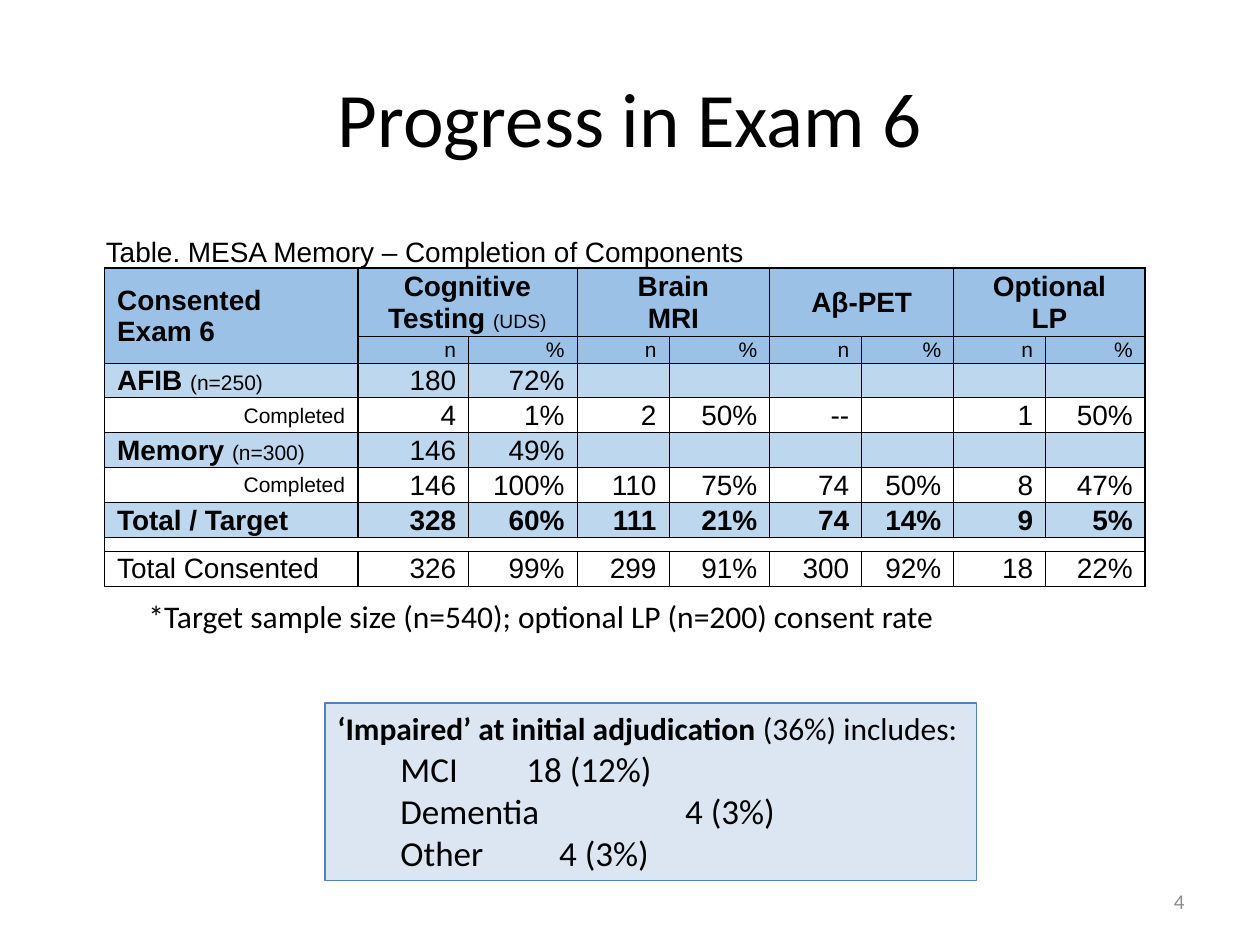
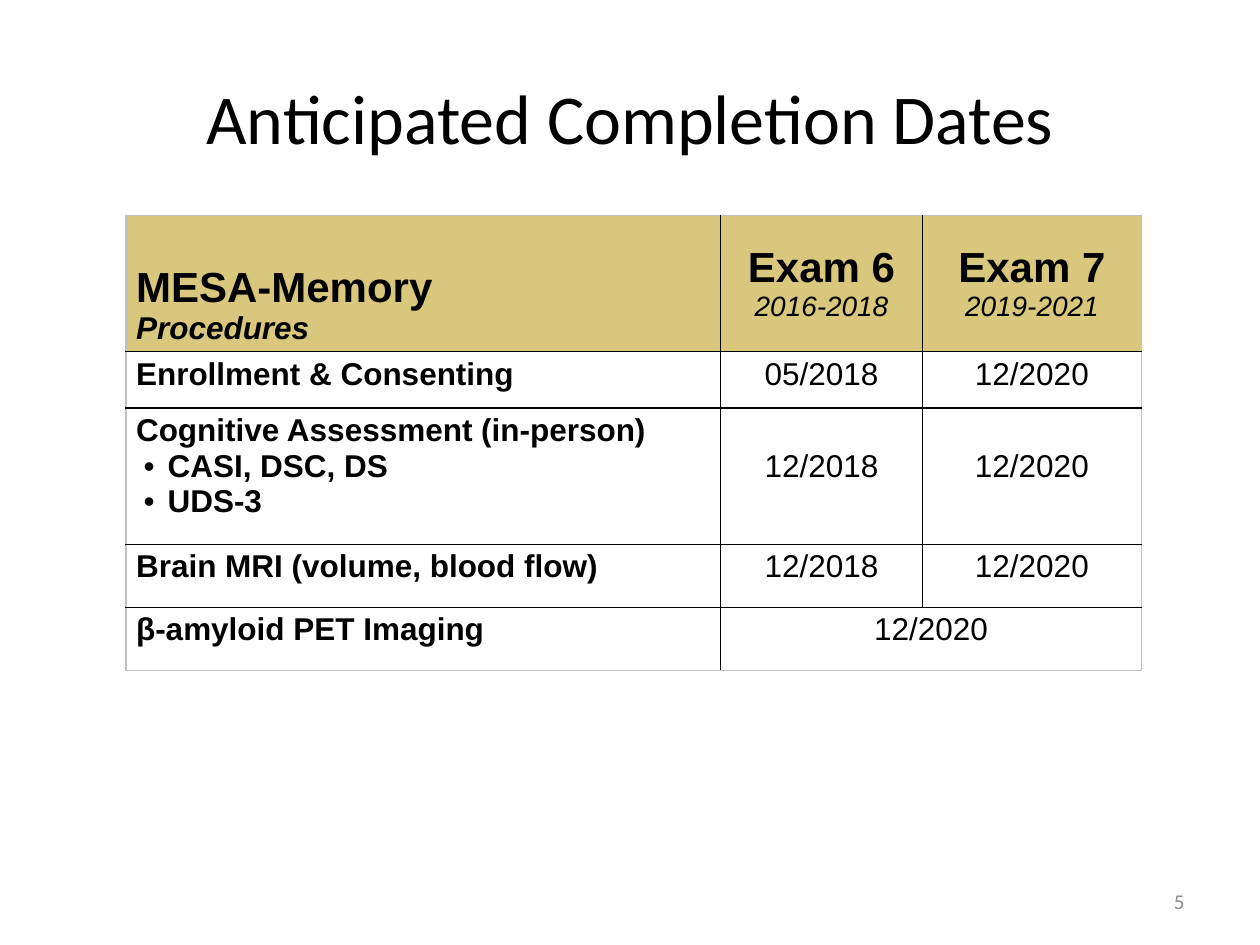
from lxml.etree import SubElement
from pptx import Presentation
from pptx.dml.color import RGBColor
from pptx.enum.shapes import MSO_SHAPE
from pptx.enum.text import MSO_ANCHOR as ANCHOR, PP_ALIGN as ALIGN
from pptx.oxml.ns import qn
from pptx.util import Inches, Pt

COLORS = {
    "text": "000000", "number": "8C8C8C", "white": "FFFFFF",
    "head": "9BC2E6", "band": "BDD7EE", "gold": "D9C77D",
    "box": "DCE6F2", "box_line": "4F81BD", "edge": "BFBFBF",
}

TITLES = [("Progress in Exam 6", 44, 4), ("Anticipated Completion Dates", 40, 5)]

CAPTION = "Table. MESA Memory – Completion of Components"
CORNER = [[("Consented", 16, "b")], [("Exam 6", 16, "b")]]
COMPONENTS = [
    [[("Cognitive", 16, "b")], [("Testing ", 16, "b"), ("(UDS)", 11, "")]],
    [[("Brain", 16, "b")], [("MRI", 16, "b")]],
    [[("Aβ-PET", 16, "b")]],
    [[("Optional", 16, "b")], [("LP", 16, "b")]],
]
PROGRESS = [
    ("band", [("AFIB ", 16, "b"), ("(n=250)", 12, "")], ["180", "72%"]),
    ("white", [("Completed", 12, "")], ["4", "1%", "2", "50%", "--", "", "1", "50%"]),
    ("band", [("Memory ", 16, "b"), ("(n=300)", 12, "")], ["146", "49%"]),
    ("white", [("Completed", 12, "")], ["146", "100%", "110", "75%", "74", "50%", "8", "47%"]),
    ("band", [("Total / Target", 16, "b")], ["328", "60%", "111", "21%", "74", "14%", "9", "5%"]),
    ("white", [], []),
    ("white", [("Total Consented", 16, "")], ["326", "99%", "299", "91%", "300", "92%", "18", "22%"]),
]
PROGRESS_COLS = [2.01, 0.88, 0.86, 0.73, 0.8, 0.73, 0.73, 0.73, 0.79]
PROGRESS_ROWS = [0.25, 0.51, 0.2] + [0.26] * 5 + [0.11, 0.26]
FOOTNOTE = "*Target sample size (n=540); optional LP (n=200) consent rate"
IMPAIRED = [("‘Impaired’ at initial adjudication ", 18, "b"), ("(36%) includes:", 18, "")]
DIAGNOSES = [("MCI", "18 (12%)", 1.5), ("Dementia", "4 (3%)", 2.76), ("Other", "4 (3%)", 1.76)]

EXAMS = [("Exam 6", "2016-2018"), ("Exam 7", "2019-2021")]
PROCEDURES = [
    (["Enrollment & Consenting"], ["05/2018", "12/2020"]),
    (["Cognitive Assessment (in-person)", "CASI, DSC, DS", "UDS-3"], ["12/2018", "12/2020"]),
    (["Brain MRI (volume, blood flow)"], ["12/2018", "12/2020"]),
    (["β-amyloid PET Imaging"], ["12/2020"]),
]
DATES_COLS = [4.72, 1.6, 1.74]
DATES_ROWS = [1.08, 0.45, 1.08, 0.5, 0.5]


def rgb(name):
    return RGBColor.from_string(COLORS[name])


def write(tf, paras, font="Calibri", align=ALIGN.LEFT, color="text"):
    for i, runs in enumerate(paras):
        p = tf.paragraphs[0] if i == 0 else tf.add_paragraph()
        p.alignment = align
        for text, size, style in runs:
            r = p.add_run()
            r.text = text
            r.font.name, r.font.size = font, Pt(size)
            r.font.bold, r.font.italic = "b" in style, "i" in style
            r.font.color.rgb = rgb(color)


def add_text(s, box, paras, align=ALIGN.LEFT, anchor=ANCHOR.TOP, color="text"):
    tf = s.shapes.add_textbox(*map(Inches, box)).text_frame
    tf.word_wrap = True
    tf.vertical_anchor = anchor
    write(tf, paras, align=align, color=color)


def add_slide(prs, title, size, number):
    s = prs.slides.add_slide(prs.slide_layouts[6])
    add_text(s, (0.5, 0.3, 9, 1.25), [[(title, size, "")]], ALIGN.CENTER, ANCHOR.MIDDLE)
    add_text(s, (7.17, 6.95, 2.33, 0.4), [[(str(number), 12, "")]],
             ALIGN.RIGHT, ANCHOR.MIDDLE, "number")
    return s


def add_grid(s, left, top, cols, rows):
    table = s.shapes.add_table(len(rows), len(cols), Inches(left), Inches(top),
                               Inches(sum(cols)), Inches(sum(rows))).table
    table.first_row = table.horz_banding = False
    for col, width in zip(table.columns, cols):
        col.width = Inches(width)
    for row, height in zip(table.rows, rows):
        row.height = Inches(height)
    return table


def fill_cell(cell, paras, align, fill, margins, anchor, empty_size=12):
    cell.margin_left, cell.margin_top, cell.margin_right, cell.margin_bottom = map(Inches, margins)
    cell.vertical_anchor = anchor
    cell.fill.solid()
    cell.fill.fore_color.rgb = rgb(fill)
    write(cell.text_frame, paras, "Arial", align)
    if not paras:
        SubElement(cell.text_frame.paragraphs[0]._p, qn("a:endParaRPr"), sz=str(empty_size * 100))


def rule_cells(table, vertical, horizontal):
    for r in range(len(table.rows)):
        for c in range(len(table.columns)):
            cell = table.cell(r, c)
            if cell.is_spanned:
                continue
            width = cell.span_width if cell.is_merge_origin else 1
            height = cell.span_height if cell.is_merge_origin else 1
            lines = [("L", vertical(r, c)), ("R", vertical(r, c + width)),
                     ("T", horizontal(r)), ("B", horizontal(r + height))]
            tcPr = cell._tc.get_or_add_tcPr()
            for side, (weight, color) in lines:
                ln = SubElement(tcPr, qn(f"a:ln{side}"), w=str(Pt(weight)))
                if weight:
                    solid = SubElement(ln, qn("a:solidFill"))
                    SubElement(solid, qn("a:srgbClr"), val=COLORS[color])
                else:
                    SubElement(ln, qn("a:noFill"))


def add_progress_table(s):
    table = add_grid(s, 0.83, 1.85, PROGRESS_COLS, PROGRESS_ROWS)
    last = len(PROGRESS_COLS) - 1
    spacer = 8
    for r in (0, spacer):
        table.cell(r, 0).merge(table.cell(r, last))
    table.cell(1, 0).merge(table.cell(2, 0))
    for c in range(1, last, 2):
        table.cell(1, c).merge(table.cell(1, c + 1))

    def vertical(r, i):
        return (0 if r == 0 else 1 if i in (0, 1, 7, last + 1) else 0.5), "text"

    rule_cells(table, vertical, lambda i: ((0, 1)[i] if i < 2 else 0.5, "text"))

    def put(r, c, paras, align, fill, empty_size=12):
        fill_cell(table.cell(r, c), paras, align, fill, (0.1, 0.01, 0.1, 0),
                  ANCHOR.MIDDLE, empty_size)

    fill_cell(table.cell(0, 0), [[(CAPTION, 16, "")]], ALIGN.LEFT, "white",
              (0.01, 0.01, 0.01, 0), ANCHOR.BOTTOM)
    put(1, 0, CORNER, ALIGN.LEFT, "head")
    for i, component in enumerate(COMPONENTS):
        put(1, 1 + 2 * i, component, ALIGN.CENTER, "head")
        for j, unit in enumerate("n%"):
            put(2, 1 + 2 * i + j, [[(unit, 12, "")]], ALIGN.RIGHT, "head")
    for r, (fill, label, values) in enumerate(PROGRESS, 3):
        if r == spacer:
            put(r, 0, [], ALIGN.LEFT, fill, 6)
            continue
        completed = label[0][0] == "Completed"
        put(r, 0, [label], ALIGN.RIGHT if completed else ALIGN.LEFT, fill)
        style = "b" if label[0][0].startswith("Total /") else ""
        for c in range(1, last + 1):
            value = values[c - 1] if c <= len(values) else ""
            put(r, c, [[(value, 16, style)]] if value else [], ALIGN.RIGHT, fill)


def add_impaired_box(s):
    sp = s.shapes.add_shape(MSO_SHAPE.RECTANGLE, *map(Inches, (2.58, 5.58, 5.17, 1.41)))
    sp.shadow.inherit = False
    sp.fill.solid()
    sp.fill.fore_color.rgb = rgb("box")
    sp.line.color.rgb = rgb("box_line")
    sp.line.width = Pt(0.75)
    tf = sp.text_frame
    tf.word_wrap = True
    tf.vertical_anchor = ANCHOR.TOP
    write(tf, [IMPAIRED] + [[(f"\t{name}\t{count}", 20, "")] for name, count, _ in DIAGNOSES])
    for p, (_, _, stop) in zip(tf.paragraphs[1:], DIAGNOSES):
        tabs = SubElement(p._p.get_or_add_pPr(), qn("a:tabLst"))
        for pos in (0.5, stop):
            SubElement(tabs, qn("a:tab"), pos=str(Inches(pos)), algn="l")


def add_dates_table(s):
    table = add_grid(s, 1, 1.71, DATES_COLS, DATES_ROWS)
    table.cell(4, 1).merge(table.cell(4, 2))

    def edge(i, end):
        return 1, "edge" if i in (0, end) else "text"

    rule_cells(table, lambda r, i: edge(i, len(DATES_COLS)), lambda i: edge(i, len(DATES_ROWS)))

    def put(r, c, paras, align, fill="white", anchor=ANCHOR.TOP, top=0.04):
        fill_cell(table.cell(r, c), paras, align, fill, (0.08, top, 0.08, 0.04), anchor)

    put(0, 0, [[("MESA-Memory", 24, "b")], [("Procedures", 18, "bi")]],
        ALIGN.LEFT, "gold", ANCHOR.BOTTOM)
    for c, (exam, years) in enumerate(EXAMS, 1):
        put(0, c, [[(exam, 24, "b")], [(years, 16, "i")]], ALIGN.CENTER, "gold", ANCHOR.MIDDLE)
    for r, (lines, dates) in enumerate(PROCEDURES, 1):
        put(r, 0, [[(line, 18, "b")] for line in lines], ALIGN.LEFT)
        for p in table.cell(r, 0).text_frame.paragraphs[1:]:
            pPr = p._p.get_or_add_pPr()
            pPr.set("marL", str(Inches(0.25)))
            pPr.set("indent", str(Inches(-0.19)))
            SubElement(pPr, qn("a:buFont"), typeface="Arial")
            SubElement(pPr, qn("a:buChar"), char="•")
        for c, date in enumerate(dates, 1):
            put(r, c, [[(date, 18, "")]], ALIGN.CENTER, top=0.32 if len(lines) > 1 else 0.04)


def main():
    prs = Presentation()
    prs.slide_width, prs.slide_height = Inches(10), Inches(7.5)
    progress, dates = [add_slide(prs, *title) for title in TITLES]
    add_progress_table(progress)
    add_text(progress, (1.08, 4.69, 7.83, 0.4), [[(FOOTNOTE, 18, "")]])
    add_impaired_box(progress)
    add_dates_table(dates)
    prs.save("out.pptx")


if __name__ == "__main__":
    main()
